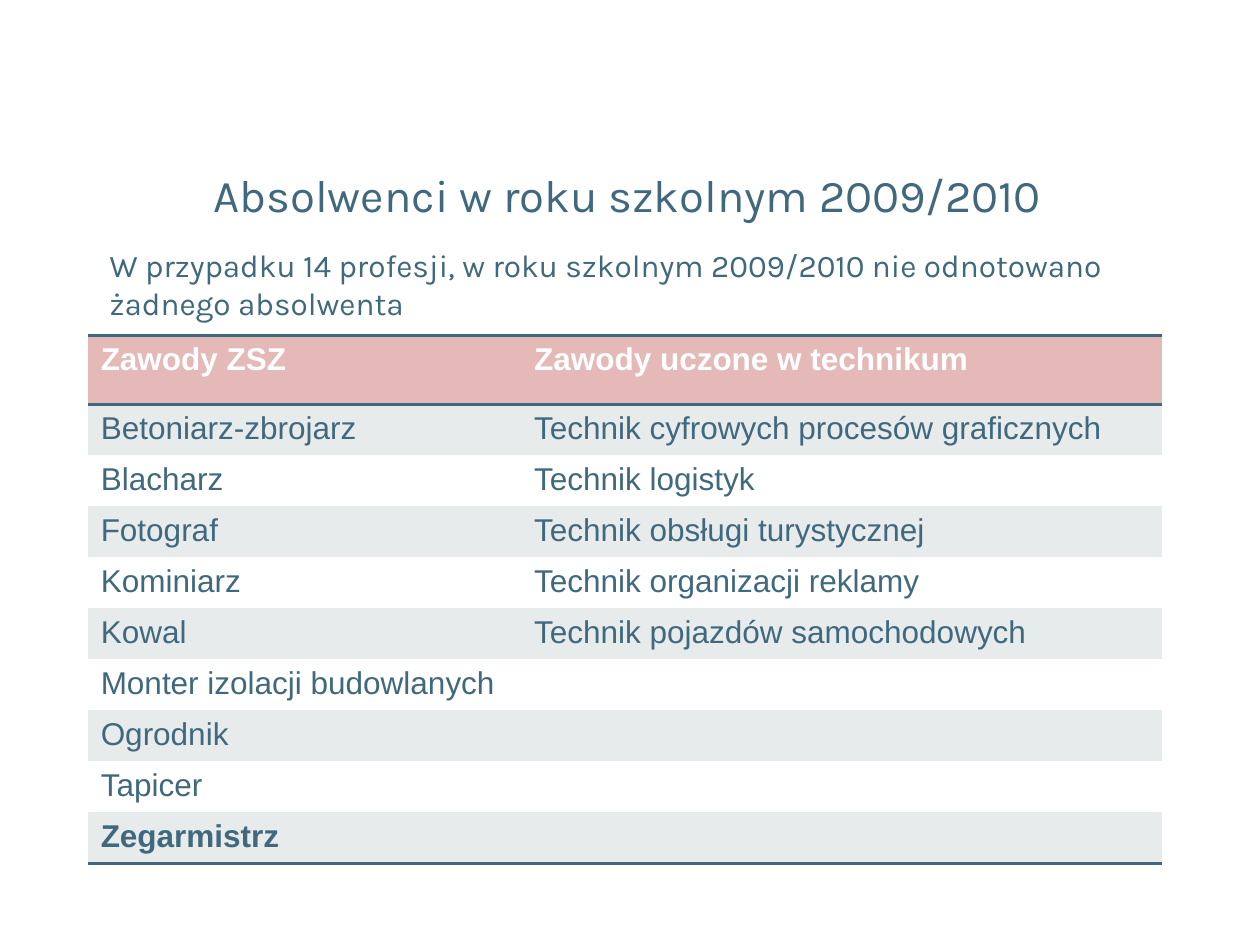
from dataclasses import dataclass
from itertools import zip_longest

import pptx
import pptx.dml.color
import pptx.enum.text
import pptx.oxml
import pptx.oxml.ns
import pptx.util
from pptx.util import Inches, Pt


@dataclass(frozen=True)
class Theme:
    ink: str = "40697D"
    header: str = "E5B9B7"
    band: str = "E8EBEC"
    paper: str = "FFFFFF"
    title_font: str = "Karla"
    table_font: str = "Arial"
    title_size: int = 26
    text_size: int = 18
    rule: int = 2


@dataclass(frozen=True)
class TextBlock:
    text: str
    box: tuple[float, float, float, float]
    margins: tuple[float, float, float, float]
    size: int
    align: pptx.enum.text.PP_ALIGN
    anchor: pptx.enum.text.MSO_ANCHOR


THEME = Theme()
LEFT, CENTER = pptx.enum.text.PP_ALIGN.LEFT, pptx.enum.text.PP_ALIGN.CENTER
TOP, BOTTOM = pptx.enum.text.MSO_ANCHOR.TOP, pptx.enum.text.MSO_ANCHOR.BOTTOM

BLOCKS = [
    TextBlock("W przypadku 14 profesji, w roku szkolnym 2009/2010 nie odnotowano "
              "żadnego absolwenta",
              (0.39, 1.87, 9.37, 0.79), (0.48, 0.08, 0.1, 0.05),
              THEME.text_size, LEFT, TOP),
    TextBlock("Absolwenci w roku szkolnym 2009/2010",
              (0.35, 1.25, 9.37, 0.53), (0.1, 0.05, 0.2, 0.02),
              THEME.title_size, CENTER, BOTTOM),
]

HEADERS = ("Zawody ZSZ", "Zawody uczone w technikum")
VOCATIONAL = ["Betoniarz-zbrojarz", "Blacharz", "Fotograf", "Kominiarz", "Kowal",
              "Monter izolacji budowlanych", "Ogrodnik", "Tapicer", "Zegarmistrz"]
TECHNICAL = ["Technik cyfrowych procesów graficznych", "Technik logistyk",
             "Technik obsługi turystycznej", "Technik organizacji reklamy",
             "Technik pojazdów samochodowych"]
TABLE_LEFT, TABLE_TOP = 0.7, 2.66
COLUMNS = (3.44, 5.08)
HEADER_HEIGHT, ROW_HEIGHT = 0.55, 0.405
PLAIN_STYLE = "{2D5ABB26-0587-4C30-8999-92F81FD0307C}"


def rgb(color: str) -> pptx.dml.color.RGBColor:
    return pptx.dml.color.RGBColor.from_string(color)


def style(p, font: str, size: int, color: str, bold: bool = False) -> None:
    p.font.name, p.font.size, p.font.bold = font, Pt(size), bold
    p.font.color.rgb = rgb(color)


def add_text(s, block: TextBlock) -> None:
    tf = s.shapes.add_textbox(*map(Inches, block.box)).text_frame
    tf.word_wrap = True
    tf.vertical_anchor = block.anchor
    tf.margin_left, tf.margin_top, tf.margin_right, tf.margin_bottom = map(
        Inches, block.margins)
    p = tf.paragraphs[0]
    p.text, p.alignment = block.text, block.align
    style(p, THEME.title_font, block.size, THEME.ink)


def add_rules(cell, sides: str) -> None:
    """Draw cell borders; T and B stand for the top and bottom sides."""
    for index, side in enumerate(sides):
        line = pptx.oxml.parse_xml(
            f'<a:ln{side} {pptx.oxml.ns.nsdecls("a")} w="{Pt(THEME.rule)}">'
            f'<a:solidFill><a:srgbClr val="{THEME.ink}"/></a:solidFill></a:ln{side}>')
        cell._tc.get_or_add_tcPr().insert(index, line)


def add_table(s) -> None:
    rows = [HEADERS, *zip_longest(VOCATIONAL, TECHNICAL, fillvalue="")]
    last = len(rows) - 1
    frame = s.shapes.add_table(
        len(rows), len(COLUMNS), Inches(TABLE_LEFT), Inches(TABLE_TOP),
        Inches(sum(COLUMNS)), Inches(HEADER_HEIGHT + last * ROW_HEIGHT))
    table = frame.table
    table._tbl.tblPr.find(pptx.oxml.ns.qn("a:tableStyleId")).text = PLAIN_STYLE
    for column, width in zip(table.columns, COLUMNS):
        column.width = Inches(width)
    for i, texts in enumerate(rows):
        header = i == 0
        table.rows[i].height = Inches(HEADER_HEIGHT if header else ROW_HEIGHT)
        fill = THEME.header if header else THEME.band if i % 2 else THEME.paper
        sides = "TB" if header else "B" if i == last else ""
        for cell, text in zip(table.rows[i].cells, texts):
            cell.text = text
            cell.fill.solid()
            cell.fill.fore_color.rgb = rgb(fill)
            add_rules(cell, sides)
            style(cell.text_frame.paragraphs[0], THEME.table_font, THEME.text_size,
                  THEME.paper if header else THEME.ink, bold=i in (0, last))


def main() -> None:
    prs = pptx.Presentation()
    prs.slide_width, prs.slide_height = Inches(10), Inches(7.5)
    s = prs.slides.add_slide(prs.slide_layouts[6])
    for block in BLOCKS:
        add_text(s, block)
    add_table(s)
    prs.save("out.pptx")


if __name__ == "__main__":
    main()
